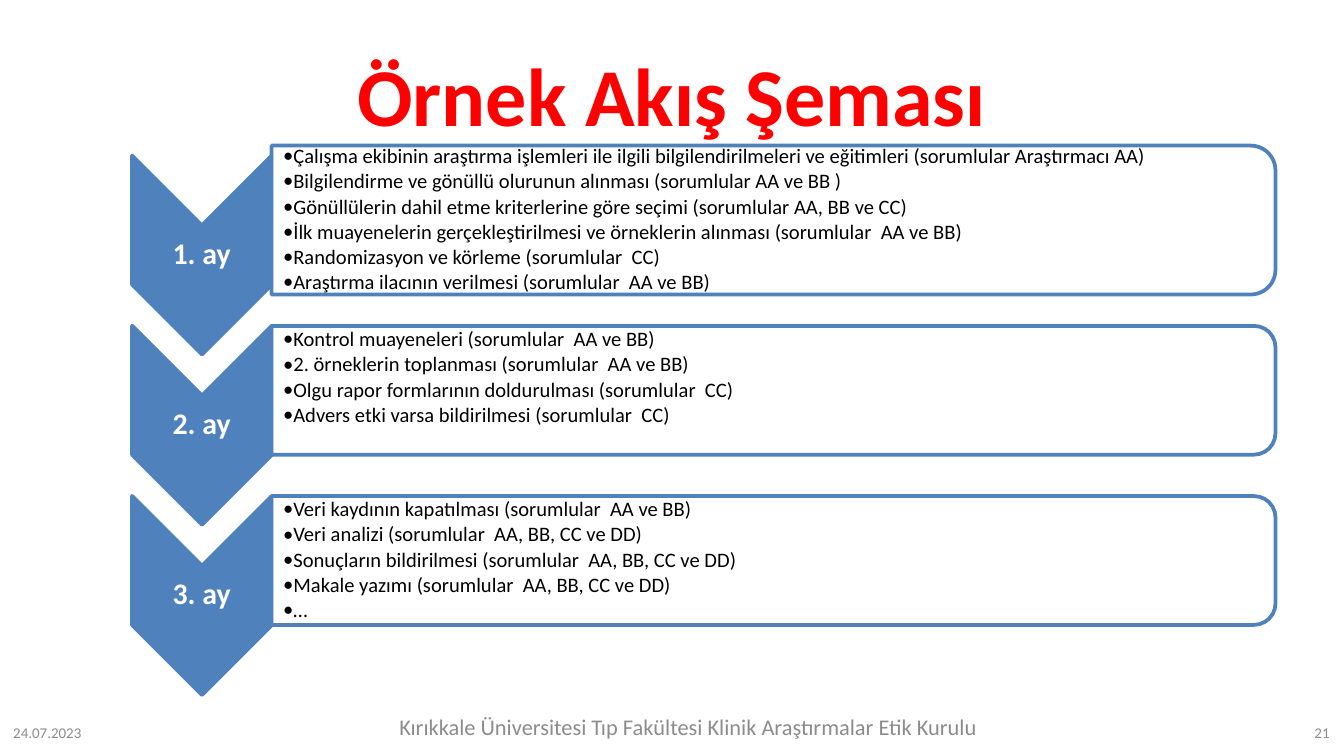
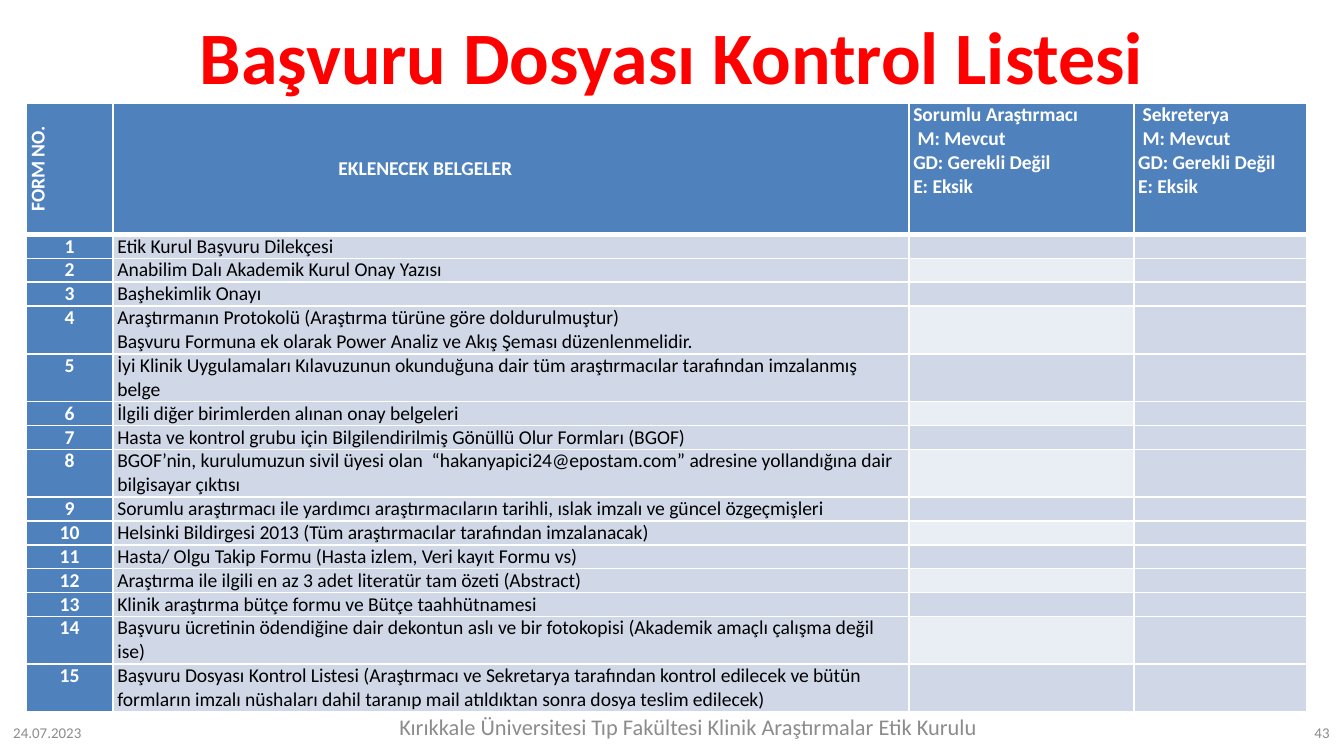
from lxml.etree import SubElement
from pptx import Presentation
from pptx.dml.color import RGBColor
from pptx.enum.shapes import MSO_SHAPE
from pptx.enum.text import MSO_ANCHOR, MSO_AUTO_SIZE, PP_ALIGN
from pptx.oxml.ns import qn
from pptx.util import Pt

FONT = "Calibri"
BLUE = RGBColor(0x4F, 0x81, 0xBD)
RED = RGBColor(0xFF, 0x00, 0x00)
WHITE = RGBColor(0xFF, 0xFF, 0xFF)
BLACK = RGBColor(0x00, 0x00, 0x00)
GREY = RGBColor(0x8C, 0x8C, 0x8C)
BAND = RGBColor(0xD0, 0xD8, 0xE8)
LIGHT_BAND = RGBColor(0xE9, 0xED, 0xF4)

DATE = "24.07.2023"
BOARD = "Kırıkkale Üniversitesi Tıp Fakültesi Klinik Araştırmalar Etik Kurulu"

FLOW_TITLE = "Örnek Akış Şeması"
MONTHS = [
    ("1. ay", [
        "Çalışma ekibinin araştırma işlemleri ile ilgili bilgilendirilmeleri ve eğitimleri (sorumlular Araştırmacı AA)",
        "Bilgilendirme ve gönüllü olurunun alınması (sorumlular AA ve BB )",
        "Gönüllülerin dahil etme kriterlerine göre seçimi (sorumlular AA, BB ve CC)",
        "İlk muayenelerin gerçekleştirilmesi ve örneklerin alınması (sorumlular  AA ve BB)",
        "Randomizasyon ve körleme (sorumlular  CC)",
        "Araştırma ilacının verilmesi (sorumlular  AA ve BB)",
    ]),
    ("2. ay", [
        "Kontrol muayeneleri (sorumlular  AA ve BB)",
        "2. örneklerin toplanması (sorumlular  AA ve BB)",
        "Olgu rapor formlarının doldurulması (sorumlular  CC)",
        "Advers etki varsa bildirilmesi (sorumlular  CC)",
    ]),
    ("3. ay", [
        "Veri kaydının kapatılması (sorumlular  AA ve BB)",
        "Veri analizi (sorumlular  AA, BB, CC ve DD)",
        "Sonuçların bildirilmesi (sorumlular  AA, BB, CC ve DD)",
        "Makale yazımı (sorumlular  AA, BB, CC ve DD)",
        "…",
    ]),
]
MONTH_PITCH = 91.2
STEP_LINE = 13.3

CHECK_TITLE = "Başvuru Dosyası Kontrol Listesi"
STATUS_KEY = "\n M: Mevcut\nGD: Gerekli Değil\nE: Eksik"
HEADERS = ["FORM NO.", "EKLENECEK BELGELER",
           "Sorumlu Araştırmacı" + STATUS_KEY, " Sekreterya" + STATUS_KEY]
DOCUMENTS = [
    "Etik Kurul Başvuru Dilekçesi",
    "Anabilim Dalı Akademik Kurul Onay Yazısı",
    "Başhekimlik Onayı",
    "Araştırmanın Protokolü (Araştırma türüne göre doldurulmuştur)\n"
    "Başvuru Formuna ek olarak Power Analiz ve Akış Şeması düzenlenmelidir.",
    "İyi Klinik Uygulamaları Kılavuzunun okunduğuna dair tüm araştırmacılar tarafından imzalanmış belge",
    "İlgili diğer birimlerden alınan onay belgeleri",
    "Hasta ve kontrol grubu için Bilgilendirilmiş Gönüllü Olur Formları (BGOF)",
    "BGOF’nin, kurulumuzun sivil üyesi olan  “hakanyapici24@epostam.com” adresine yollandığına dair bilgisayar çıktısı",
    "Sorumlu araştırmacı ile yardımcı araştırmacıların tarihli, ıslak imzalı ve güncel özgeçmişleri",
    "Helsinki Bildirgesi 2013 (Tüm araştırmacılar tarafından imzalanacak)",
    "Hasta/ Olgu Takip Formu (Hasta izlem, Veri kayıt Formu vs)",
    "Araştırma ile ilgili en az 3 adet literatür tam özeti (Abstract)",
    "Klinik araştırma bütçe formu ve Bütçe taahhütnamesi",
    "Başvuru ücretinin ödendiğine dair dekontun aslı ve bir fotokopisi (Akademik amaçlı çalışma değil ise)",
    "Başvuru Dosyası Kontrol Listesi (Araştırmacı ve Sekretarya tarafından kontrol edilecek ve bütün "
    "formların imzalı nüshaları dahil taranıp mail atıldıktan sonra dosya teslim edilecek)",
]
TWO_LINE_FORMS = {4, 5, 8, 14, 15}
COLUMN_WIDTHS = [46.5, 426.4, 120.5, 92.6]
HEADER_HEIGHT = 70.3
ROW_HEIGHT = 12.8


def style_text(frame, size, color, bold=False, align=PP_ALIGN.LEFT):
    """Format every run of a text frame alike."""
    for para in frame.paragraphs:
        para.alignment = align
        for span in para.runs:
            span.font.name = FONT
            span.font.size = Pt(size)
            span.font.bold = bold
            span.font.color.rgb = color


def set_margins(target, left, top, right, bottom):
    """Set the inner margins of a text frame or a table cell."""
    target.margin_left, target.margin_top = Pt(left), Pt(top)
    target.margin_right, target.margin_bottom = Pt(right), Pt(bottom)


def add_text(page, text, left, top, width, height, size, color, **style):
    """Add a wrapped, vertically centred text box and return its frame."""
    frame = page.shapes.add_textbox(Pt(left), Pt(top), Pt(width), Pt(height)).text_frame
    frame.word_wrap = True
    frame.vertical_anchor = MSO_ANCHOR.MIDDLE
    frame.text = text
    style_text(frame, size, color, **style)
    return frame


def add_page(deck, title, top, height, size, number):
    """Add a slide with its title and footers."""
    page = deck.slides.add_slide(deck.slide_layouts[5])
    heading = page.shapes.title
    heading.left, heading.top = Pt(36), Pt(top)
    heading.width, heading.height = Pt(648), Pt(height)
    frame = heading.text_frame
    frame.text = title
    frame.auto_size = MSO_AUTO_SIZE.NONE
    frame.vertical_anchor = MSO_ANCHOR.MIDDLE
    style_text(frame, size, RED, bold=True, align=PP_ALIGN.CENTER)
    add_text(page, DATE, 0, 381.6, 168, 21.6, 8, GREY)
    add_text(page, BOARD, 201.3, 378.4, 335, 21.6, 12, GREY, align=PP_ALIGN.CENTER)
    add_text(page, str(number), 551.4, 381.6, 168, 21.6, 8, GREY, align=PP_ALIGN.RIGHT)
    return page


def add_turned_shape(page, kind, center_x, center_y, width, height, fill):
    """Add an outlined shape turned a quarter; width and height are as seen."""
    shape = page.shapes.add_shape(kind, Pt(center_x - height / 2), Pt(center_y - width / 2),
                                  Pt(height), Pt(width))
    shape.rotation = 90
    shape.shadow.inherit = False
    shape.fill.solid()
    shape.fill.fore_color.rgb = fill
    shape.line.color.rgb = BLUE
    shape.line.width = Pt(2)
    return shape


def add_month(page, index, label, steps):
    """Draw one month: chevron, label and the framed list of steps."""
    offset = index * MONTH_PITCH
    chevron_y = 136.6 + offset
    frame_y = 117.9 + offset
    frame_height = max(69, STEP_LINE * len(steps))

    add_turned_shape(page, MSO_SHAPE.CHEVRON, 108.2, chevron_y, 74.9, 106.6, BLUE)
    name = add_text(page, label, 70.6, chevron_y - 17.3, 74.9, 31.7, 16, WHITE,
                    bold=True, align=PP_ALIGN.CENTER)
    set_margins(name, 0.7, 0.7, 0.7, 0.7)

    panel = add_turned_shape(page, MSO_SHAPE.ROUND_2_SAME_RECTANGLE, 414.4, frame_y,
                             537.8, frame_height, WHITE)
    color = panel.fill._xPr.find(qn("a:solidFill"))[0]
    SubElement(color, qn("a:alpha")).set("val", "90000")

    height = frame_height - 7
    listing = add_text(page, "\n".join(steps), 145.3, frame_y - height / 2, 534, height, 11, BLACK)
    spare_lines = max(0, 5 - len(steps))
    set_margins(listing, 6.4, 0.7, 0.7, 0.7 + spare_lines * STEP_LINE)
    for para in listing.paragraphs:
        para.level = 1
        para.line_spacing = 0.9
        para.space_after = Pt(1.65)
        properties = para._p.get_or_add_pPr()
        properties.set("marL", str(Pt(4.5)))
        properties.set("indent", str(Pt(-4.5)))
        SubElement(properties, qn("a:buFont")).set("typeface", FONT)
        SubElement(properties, qn("a:buChar")).set("char", "•")


def style_cell(cell, text, fill, color, bold, align, top=1, bottom=1):
    """Fill one table cell and draw its white borders."""
    properties = cell._tc.get_or_add_tcPr()
    for side, width in (("L", 1), ("R", 1), ("T", top), ("B", bottom)):
        line = SubElement(properties, qn("a:ln" + side), w=str(Pt(width)))
        paint = SubElement(line, qn("a:solidFill"))
        SubElement(paint, qn("a:srgbClr"), val=str(WHITE))
    cell.fill.solid()
    cell.fill.fore_color.rgb = fill
    set_margins(cell, 2.4, 0, 2.4, 0)
    cell.text = text
    style_text(cell.text_frame, 10.5, color, bold, align)
    for para in cell.text_frame.paragraphs:
        para._p.get_or_add_endParaRPr().set("sz", "1050")


def add_checklist(page):
    """Add the table of required documents."""
    heights = [HEADER_HEIGHT] + [ROW_HEIGHT * (2 if number in TWO_LINE_FORMS else 1)
                                 for number in range(1, len(DOCUMENTS) + 1)]
    table = page.shapes.add_table(len(heights), len(COLUMN_WIDTHS), Pt(14), Pt(55.3),
                                  Pt(sum(COLUMN_WIDTHS)), Pt(sum(heights))).table
    table.horz_banding = False
    for column, width in zip(table.columns, COLUMN_WIDTHS):
        column.width = Pt(width)
    for row, height in zip(table.rows, heights):
        row.height = Pt(height)

    for column, text in enumerate(HEADERS):
        align = PP_ALIGN.CENTER if column < 2 else PP_ALIGN.LEFT
        style_cell(table.cell(0, column), text, BLUE, WHITE, True, align, bottom=3)
    table.cell(0, 0)._tc.get_or_add_tcPr().set("vert", "vert270")
    documents_header = table.cell(0, 1)
    documents_header.vertical_anchor = MSO_ANCHOR.MIDDLE
    documents_header.margin_right = Pt(94)

    for number, document in enumerate(DOCUMENTS, 1):
        top = 3 if number == 1 else 1
        band = BAND if number % 2 else LIGHT_BAND
        style_cell(table.cell(number, 0), str(number), BLUE, WHITE, True, PP_ALIGN.CENTER, top)
        for column, (text, fill) in enumerate([(document, BAND), ("", band), ("", BAND)], 1):
            style_cell(table.cell(number, column), text, fill, BLACK, False, PP_ALIGN.LEFT, top)


def main():
    """Build and save the two slides."""
    deck = Presentation()
    deck.slide_width, deck.slide_height = Pt(720), Pt(405)
    flow = add_page(deck, FLOW_TITLE, 16.2, 67.7, 44, 21)
    for index, (label, steps) in enumerate(MONTHS):
        add_month(flow, index, label, steps)
    add_checklist(add_page(deck, CHECK_TITLE, 4.3, 50.4, 39.6, 43))
    deck.save("out.pptx")


if __name__ == "__main__":
    main()
